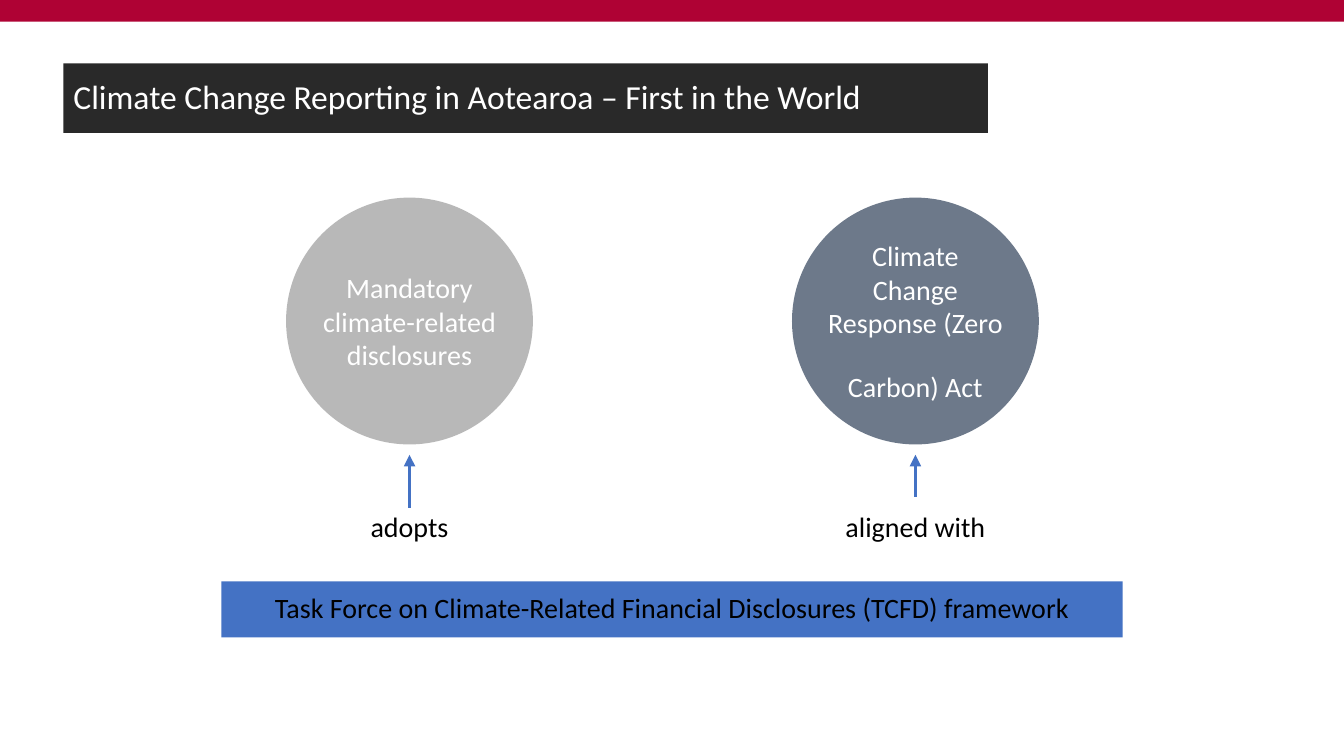
from pptx import Presentation
from pptx.dml.color import RGBColor
from pptx.enum.shapes import MSO_CONNECTOR as Line, MSO_SHAPE as Shape
from pptx.enum.text import MSO_ANCHOR as Anchor, PP_ALIGN as Align
from pptx.oxml.ns import qn
from pptx.util import Cm, Pt
from lxml.etree import SubElement

RED = RGBColor(0xAF, 0x02, 0x34)
DARK = RGBColor(0x29, 0x29, 0x29)
BLUE = RGBColor(0x44, 0x72, 0xC4)
GREY = RGBColor(0xA5, 0xA5, 0xA5)
SLATE = RGBColor(0x44, 0x54, 0x6A)
WHITE = RGBColor(0xFF, 0xFF, 0xFF)
BLACK = RGBColor(0x00, 0x00, 0x00)

WIDTH = 33.87
SIZE = 6.22
TOP = 4.98
TIP = 11.46


def add_text(shape, lines, color, size=20, align=Align.CENTER, space=0.9):
    frame = shape.text_frame
    frame.word_wrap = True
    para = frame.paragraphs[0]
    para.alignment = align
    para.line_spacing = space
    for i, line in enumerate(lines):
        if i:
            para.add_line_break()
        run = para.add_run()
        run.text = line
        run.font.name = "Calibri"
        run.font.size = Pt(size)
        run.font.color.rgb = color
    return frame


def add_shape(slide, kind, left, top, width, height, color):
    shape = slide.shapes.add_shape(kind, Cm(left), Cm(top), Cm(width), Cm(height))
    shape.shadow.inherit = False
    shape.fill.solid()
    shape.fill.fore_color.rgb = color
    shape.line.fill.background()
    shape.text_frame.vertical_anchor = Anchor.MIDDLE
    return shape


def clear_pad(frame):
    frame.margin_left = frame.margin_right = Cm(0)
    frame.margin_top = frame.margin_bottom = Cm(0)


def add_circle(slide, mid, lines, color):
    circle = add_shape(slide, Shape.OVAL, mid - SIZE / 2, TOP, SIZE, SIZE, color)
    tint = circle.fill._xPr.find(qn("a:solidFill"))[0]
    SubElement(tint, qn("a:alpha")).set("val", "78000")
    clear_pad(add_text(circle, lines, WHITE, space=1.0))


def add_arrow(slide, mid, start):
    arrow = slide.shapes.add_connector(Line.STRAIGHT, Cm(mid), Cm(start), Cm(mid), Cm(TIP))
    arrow.line.color.rgb = BLUE
    arrow.line.width = Pt(2.75)
    SubElement(arrow.line._get_or_add_ln(), qn("a:tailEnd")).set("type", "triangle")
    SubElement(arrow._element.spPr, qn("a:effectLst"))


def add_label(slide, mid, width, text):
    box = slide.shapes.add_textbox(Cm(mid - width / 2), Cm(12.8), Cm(width), Cm(1.93))
    add_text(box, [text], BLACK)


def main():
    deck = Presentation()
    deck.slide_width = Cm(WIDTH)
    deck.slide_height = Cm(19.05)
    slide = deck.slides.add_slide(deck.slide_layouts[6])

    add_shape(slide, Shape.RECTANGLE, 0, 0, WIDTH, 0.55, RED)
    title = add_shape(slide, Shape.RECTANGLE, 1.6, 1.6, 23.3, 1.75, DARK)
    add_text(title, ["Climate Change Reporting in Aotearoa – First in the World"],
             WHITE, 24, Align.LEFT)
    base = add_shape(slide, Shape.RECTANGLE, 5.58, 14.65, 22.71, 1.41, BLUE)
    clear_pad(add_text(
        base, ["Task Force on Climate-Related Financial Disclosures (TCFD) framework"], BLACK))

    parts = [
        (10.32, GREY, ["Mandatory climate-related disclosures"], 12.8, 3.07, "adopts"),
        (23.07, SLATE, ["Climate Change Response (Zero ", "Carbon) Act"], 12.52, 5.3,
         "aligned with"),
    ]
    for mid, color, lines, start, width, label in parts:
        add_circle(slide, mid, lines, color)
        add_arrow(slide, mid, start)
        add_label(slide, mid, width, label)

    deck.save("out.pptx")


if __name__ == "__main__":
    main()
